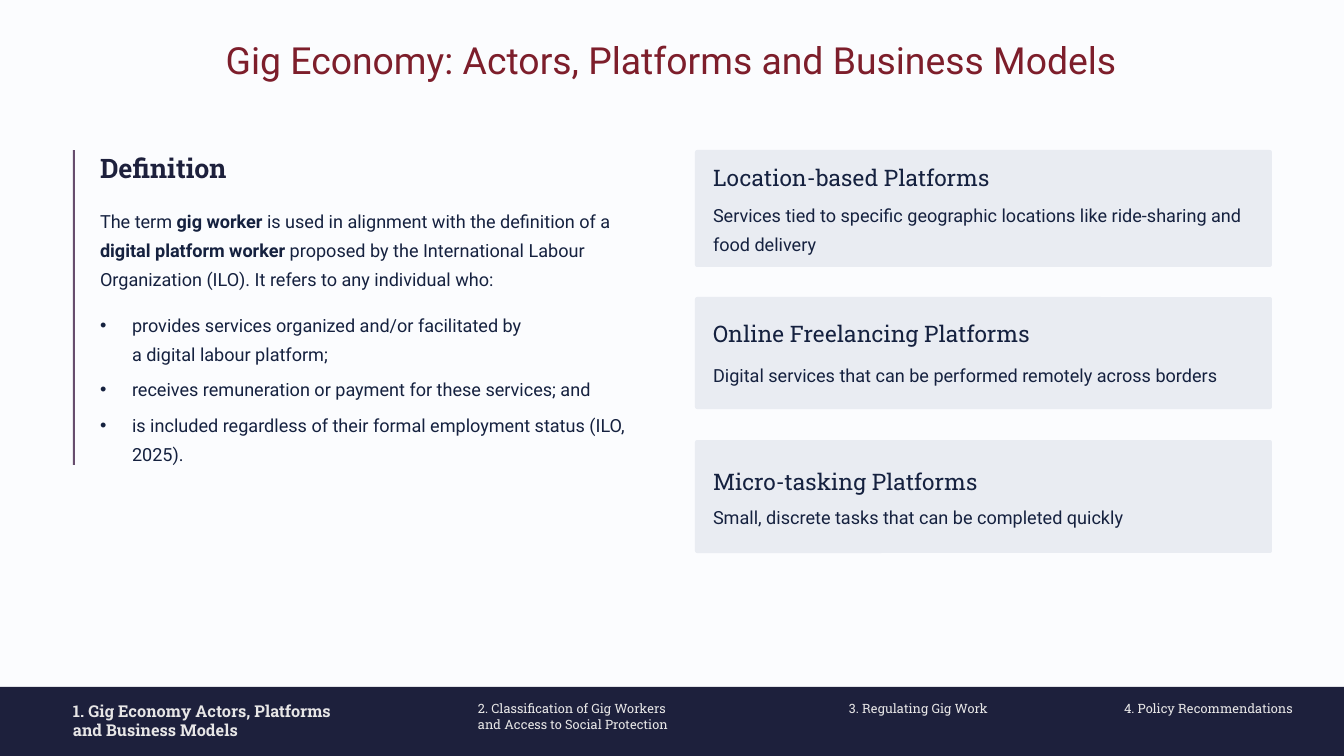
from pptx import Presentation
from pptx.dml.color import RGBColor
from pptx.enum.shapes import MSO_SHAPE as SHAPE
from pptx.enum.text import MSO_ANCHOR as ANCHOR, PP_ALIGN as ALIGN
from pptx.oxml.ns import qn
from pptx.util import Pt
from lxml.etree import SubElement

PX = 914400 / 84
COLORS = {
    "page": "FBFCFE", "title": "7D1E2B", "navy": "1D203C", "ink": "15213F",
    "rule": "674D6E", "card": "E9ECF2", "footer": "E7E6E6",
}
SANS, SLAB = "Roboto", "Roboto Slab"


def px(length):
    """Turn pixels into EMU."""
    return round(length * PX)


def rgb(name):
    """Look up a palette colour."""
    return RGBColor.from_string(COLORS[name])


def add_block(slide, kind, box, color, radius=None):
    """Add a plain filled shape without outline."""
    block = slide.shapes.add_shape(kind, *map(px, box))
    block.shadow.inherit = False
    block.fill.solid()
    block.fill.fore_color.rgb = rgb(color)
    block.line.fill.background()
    if radius is not None:
        block.adjustments[0] = radius


def add_bullet(paragraph):
    """Give a paragraph a hanging round bullet."""
    properties = paragraph._p.get_or_add_pPr()
    properties.set("marL", str(px(32)))
    properties.set("indent", str(-px(32)))
    SubElement(properties, qn("a:buFont")).set("typeface", "Arial")
    SubElement(properties, qn("a:buChar")).set("char", "•")


def add_text(slide, box, paragraphs, size, font, color, leading=None,
             bold=False, align=ALIGN.LEFT, bullet=False):
    """Add paragraphs of (text, bold) runs or plain strings."""
    frame = slide.shapes.add_textbox(*map(px, box)).text_frame
    frame.word_wrap = True
    frame.vertical_anchor = ANCHOR.TOP
    frame.margin_left = frame.margin_right = 0
    frame.margin_top = frame.margin_bottom = 0
    for index, content in enumerate(paragraphs):
        paragraph = frame.paragraphs[0] if index == 0 else frame.add_paragraph()
        paragraph.alignment = align
        if leading:
            paragraph.line_spacing = Pt(leading)
        if bullet:
            add_bullet(paragraph)
        runs = [(content, bold)] if isinstance(content, str) else content
        for text, strong in runs:
            for line_number, line in enumerate(text.split("\n")):
                if line_number:
                    paragraph.add_line_break()
                run = paragraph.add_run()
                run.text = line
                run.font.size = Pt(size)
                run.font.name = font
                run.font.bold = strong
                run.font.color.rgb = rgb(color)


def add_body(slide, box, content, bullet=False):
    """Add one paragraph in the body style."""
    add_text(slide, box, [content], 15.5, SANS, "ink", 25, bullet=bullet)


def add_definition(slide):
    """Add the ruled definition column."""
    add_text(slide, (100, 150, 274, 34), ["Definition"], 23, SLAB, "navy", 29, bold=True)
    add_body(slide, (100, 203, 560, 87), [
        ("The term ", False),
        ("gig worker ", True),
        ("is used in alignment with the definition of a", False),
        (" digital platform worker ", True),
        ("proposed by the International Labour Organization (ILO). "
         "It refers to any individual who:", False),
    ])
    criteria = [
        (307, 58, "provides services organized and/or facilitated by \na digital labour platform;"),
        (371, 29, "receives remuneration or payment for these services; and"),
        (407, 58, "is included regardless of their formal employment status (ILO, 2025)."),
    ]
    for top, height, criterion in criteria:
        add_body(slide, (100, top, 549, height), criterion, bullet=True)
    add_block(slide, SHAPE.RECTANGLE, (73, 150, 2, 315), "rule")


def add_platform(slide, top, height, heading_top, detail_top, detail_height, heading, detail):
    """Add a card for one type of platform."""
    add_block(slide, SHAPE.ROUNDED_RECTANGLE, (695, top, 577, height), "card", 0.02)
    add_text(slide, (713, heading_top, 540, 29), [heading], 19.5, SLAB, "ink", 24)
    add_body(slide, (713, detail_top, 540, detail_height), detail)


def add_footer(slide):
    """Add the section bar with the current section in bold."""
    add_block(slide, SHAPE.RECTANGLE, (0, 687, 1344, 69), "navy")
    sections = [
        (73, 275, ["1. Gig Economy Actors, Platforms", "and Business Models"]),
        (478, 242, ["2. Classification of Gig Workers", "and Access to Social Protection"]),
        (849, 144, ["3. Regulating Gig Work"]),
        (1124, 174, ["4. Policy Recommendations"]),
    ]
    for index, (left, width, lines) in enumerate(sections):
        current = index == 0
        add_text(slide, (left, 701, width, 33), lines, 14 if current else 11,
                 SLAB, "footer", bold=current)


def main():
    """Build and save the slide."""
    deck = Presentation()
    deck.slide_width, deck.slide_height = px(1344), px(756)
    slide = deck.slides.add_slide(deck.slide_layouts[6])
    slide.background.fill.solid()
    slide.background.fill.fore_color.rgb = rgb("page")
    add_text(slide, (219, 36, 905, 45), ["Gig Economy: Actors, Platforms and Business Models"],
             32, SANS, "title", 39, align=ALIGN.CENTER)
    add_definition(slide)
    platforms = [
        (150, 117, 163, 197, 58, "Location-based Platforms",
         "Services tied to specific geographic locations like ride-sharing and food delivery"),
        (297, 112, 319, 357, 29, "Online Freelancing Platforms",
         "Digital services that can be performed remotely across borders"),
        (440, 113, 467, 499, 29, "Micro-tasking Platforms",
         "Small, discrete tasks that can be completed quickly"),
    ]
    for platform in platforms:
        add_platform(slide, *platform)
    add_footer(slide)
    deck.save("out.pptx")


if __name__ == "__main__":
    main()
